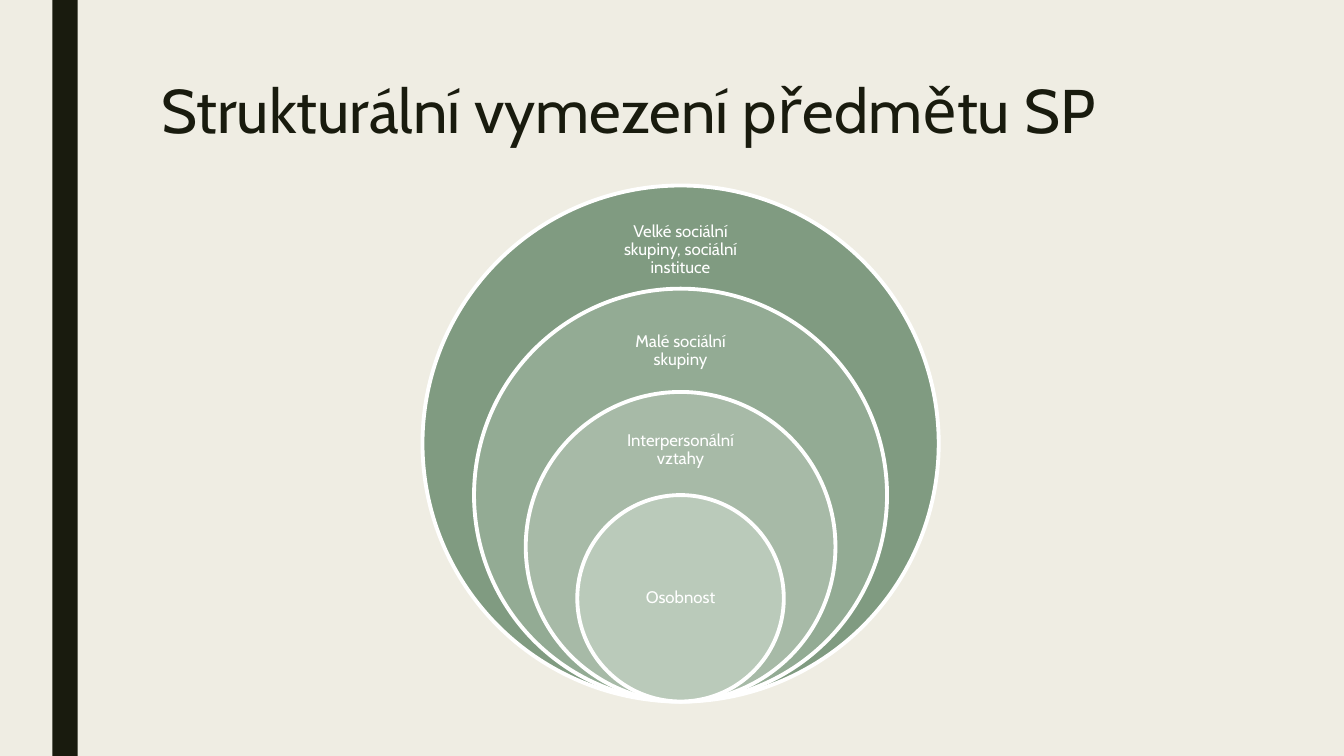
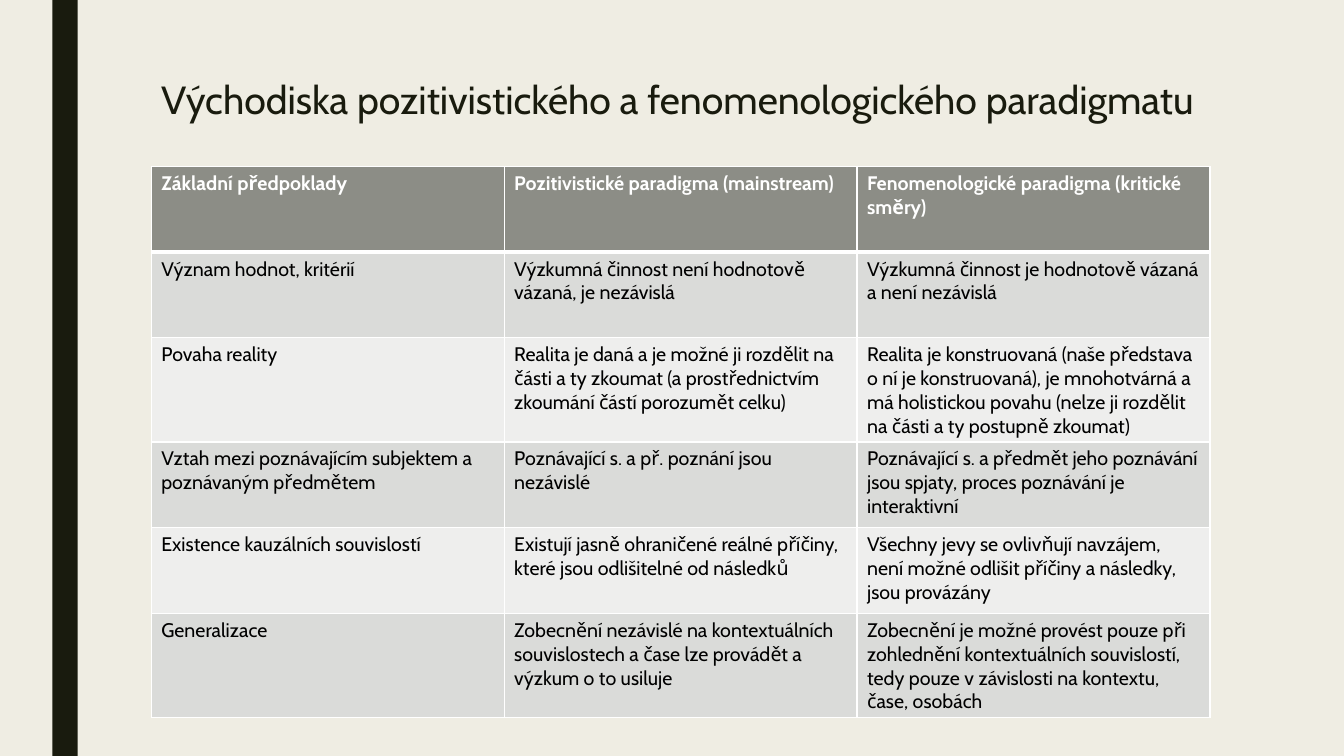
from pptx import Presentation
from pptx.dml.color import RGBColor
from pptx.enum.shapes import MSO_SHAPE
from pptx.enum.text import MSO_ANCHOR, PP_ALIGN
from pptx.oxml.xmlchemy import OxmlElement
from pptx.util import Inches, Pt

LAYERS_TITLE = "Strukturální vymezení předmětu SP"
LAYERS = [
    {"label": "Velké sociální skupiny, sociální instituce", "fill": "809B81", "inset": 0.05, "depth": 0.15},
    {"label": "Malé sociální skupiny", "fill": "93AB94", "inset": 0.06, "depth": 0.18},
    {"label": "Interpersonální vztahy", "fill": "A7BAA7", "inset": 0.075, "depth": 0.225},
    {"label": "Osobnost", "fill": "BACABA", "inset": 0.25, "depth": 0.5},
]

PARADIGMS_TITLE = "Východiska pozitivistického a fenomenologického paradigmatu"
PARADIGMS = [
    ("Základní předpoklady",
     "Pozitivistické paradigma (mainstream)",
     "Fenomenologické paradigma (kritické směry)"),
    ("Význam hodnot, kritérií",
     "Výzkumná činnost není hodnotově vázaná, je nezávislá",
     "Výzkumná činnost je hodnotově vázaná a není nezávislá"),
    ("Povaha reality",
     "Realita je daná a je možné ji rozdělit na části a ty zkoumat "
     "(a prostřednictvím zkoumání částí porozumět celku)",
     "Realita je konstruovaná (naše představa o ní je konstruovaná), je mnohotvárná "
     "a má holistickou povahu (nelze ji rozdělit na části a ty postupně zkoumat)"),
    ("Vztah mezi poznávajícím subjektem a poznávaným předmětem",
     "Poznávající s. a př. poznání jsou nezávislé",
     "Poznávající s. a předmět jeho poznávání jsou spjaty, proces poznávání je interaktivní"),
    ("Existence kauzálních souvislostí",
     "Existují jasně ohraničené reálné příčiny, které jsou odlišitelné od následků",
     "Všechny jevy se ovlivňují navzájem, není možné odlišit příčiny a následky, jsou provázány"),
    ("Generalizace",
     "Zobecnění nezávislé na kontextuálních souvislostech a čase lze provádět a výzkum o to usiluje",
     "Zobecnění je možné provést pouze při zohlednění kontextuálních souvislostí, "
     "tedy pouze v závislosti na kontextu, čase, osobách"),
]

THEME = {
    "font": "Cabin",
    "paper": "EFEDE3", "ink": "191B0E", "white": "FFFFFF", "black": "000000",
    "head": "8C8D86", "stripes": ("EEEEED", "DADBD9"),
    "title": 44, "long_title": 28, "label": 12, "cell": 14,
    "ring": 2.75, "rule": 1, "head_rule": 3,
}

WIDTH, HEIGHT = 13.33, 7.5
LEFT, CONTENT_WIDTH = 1.5, 10.5
TITLE_TOP = HEIGHT / 10
CENTRE = LEFT + CONTENT_WIDTH / 2
OUTER, BASELINE = 5.12, 6.96
TABLE_TOP, ROW_HEIGHT = 1.65, 0.85


def colour(name):
    return RGBColor.from_string(THEME.get(name, name))


def apply(target, formats):
    for attribute, value in formats.items():
        setattr(target, attribute, value)


def paint(part, name):
    part.fill.solid()
    part.fill.fore_color.rgb = colour(name)


def write(frame, text, size, ink, bold=False, **paragraph_formats):
    paragraph = frame.paragraphs[0]
    apply(paragraph, paragraph_formats)
    run = paragraph.add_run()
    run.text = text
    apply(run.font, {"name": THEME["font"], "size": Pt(THEME[size]), "bold": bold})
    run.font.color.rgb = colour(ink)


def add_solid(slide, kind, box, fill):
    solid = slide.shapes.add_shape(kind, *map(Inches, box))
    solid.shadow.inherit = False
    paint(solid, fill)
    return solid


def add_text(slide, box, text, size, ink, frame_formats, **paragraph_formats):
    frame = slide.shapes.add_textbox(*map(Inches, box)).text_frame
    apply(frame, {"word_wrap": True, **frame_formats})
    write(frame, text, size, ink, **paragraph_formats)


def start_slide(deck, title, size):
    slide = deck.slides.add_slide(deck.slide_layouts[6])
    band = add_solid(slide, MSO_SHAPE.RECTANGLE, (0.52, 0, 0.25, HEIGHT), "ink")
    band.line.fill.background()
    add_text(slide, (LEFT, TITLE_TOP, CONTENT_WIDTH, 0.75), title, size, "ink", {}, line_spacing=0.89)
    return slide


def draw_layers(slide):
    label_width = 0.28 * OUTER
    label_frame = {"vertical_anchor": MSO_ANCHOR.MIDDLE}
    for side in ("left", "top", "right", "bottom"):
        label_frame["margin_" + side] = Inches(0.09)
    for index, layer in enumerate(LAYERS):
        diameter = OUTER * (1 - index / 5)
        top = BASELINE - diameter
        circle = add_solid(slide, MSO_SHAPE.OVAL,
                           (CENTRE - diameter / 2, top, diameter, diameter), layer["fill"])
        circle.line.color.rgb = colour("white")
        circle.line.width = Pt(THEME["ring"])
        label_box = (CENTRE - label_width / 2, top + layer["inset"] * diameter,
                     label_width, layer["depth"] * diameter)
        add_text(slide, label_box, layer["label"], "label", "white", label_frame,
                 alignment=PP_ALIGN.CENTER, line_spacing=0.9)


def add_borders(cell, widths):
    properties = cell._tc.get_or_add_tcPr()
    for position, (edge, width) in enumerate(widths.items()):
        border = OxmlElement("a:" + edge)
        border.set("w", str(Pt(width)))
        fill = OxmlElement("a:solidFill")
        ink = OxmlElement("a:srgbClr")
        ink.set("val", THEME["white"])
        fill.append(ink)
        border.append(fill)
        properties.insert(position, border)


def draw_paradigms(slide):
    rows, columns = len(PARADIGMS), len(PARADIGMS[0])
    box = (LEFT, TABLE_TOP, CONTENT_WIDTH, rows * ROW_HEIGHT)
    grid = slide.shapes.add_table(rows, columns, *map(Inches, box)).table
    for row, texts in enumerate(PARADIGMS):
        heading = row == 0
        widths = dict.fromkeys(("lnL", "lnR", "lnT", "lnB"), THEME["rule"])
        if heading:
            widths["lnB"] = THEME["head_rule"]
        elif row == 1:
            widths["lnT"] = THEME["head_rule"]
        for column, text in enumerate(texts):
            cell = grid.cell(row, column)
            paint(cell, "head" if heading else THEME["stripes"][row % 2])
            write(cell.text_frame, text, "cell", "white" if heading else "black", bold=heading)
            add_borders(cell, widths)


def main():
    deck = Presentation()
    apply(deck, {"slide_width": Inches(WIDTH), "slide_height": Inches(HEIGHT)})
    paint(deck.slide_master.background, "paper")
    draw_layers(start_slide(deck, LAYERS_TITLE, "title"))
    draw_paradigms(start_slide(deck, PARADIGMS_TITLE, "long_title"))
    deck.save("out.pptx")


if __name__ == "__main__":
    main()
